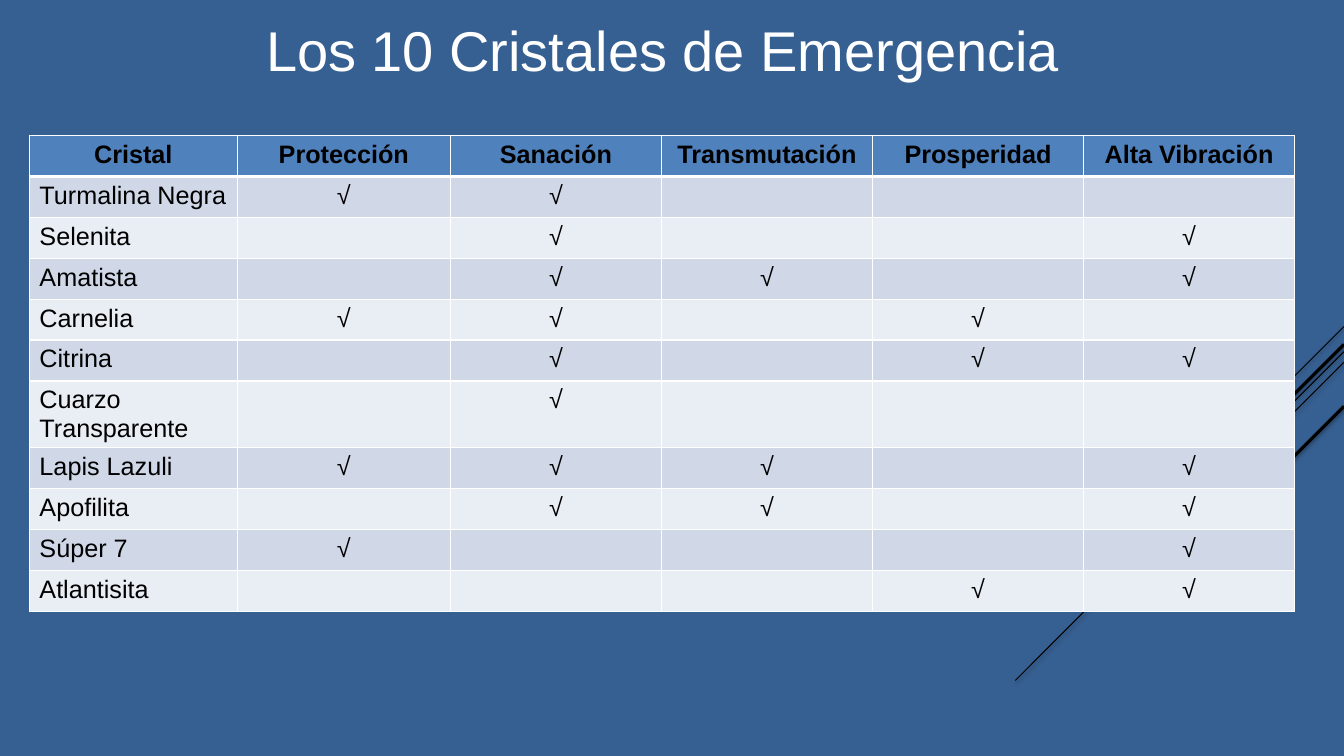
from lxml import etree
from pptx import Presentation
from pptx import util as u
from pptx.dml.color import RGBColor
from pptx.enum import shapes, text
from pptx.oxml.ns import qn

SLIDE_W, SLIDE_H = 1280, 720
FONT = "Arial"
WHITE, BLACK = "FFFFFF", "000000"
BACKGROUND, HEADER = "376092", "4F81BD"
BANDS = ["D0D8E8", "E9EDF4"]

USES = ["Protección", "Sanación", "Transmutación", "Prosperidad", "Alta Vibración"]
# Each crystal with the numbers of the uses it is ticked for
CRYSTALS = [
    ("Turmalina Negra", {0, 1}),
    ("Selenita", {1, 4}),
    ("Amatista", {1, 2, 4}),
    ("Carnelia", {0, 1, 3}),
    ("Citrina", {1, 3, 4}),
    ("Cuarzo Transparente", {1}),
    ("Lapis Lazuli", {0, 1, 2, 4}),
    ("Apofilita", {1, 2, 4}),
    ("Súper 7", {0, 4}),
    ("Atlantisita", {3, 4}),
]
COLUMN_WIDTHS = [198, 203, 201, 201, 201, 201]
ROW_HEIGHT = 39

# Diagonals from the right edge: start height, run, line width in points
DIAGONALS = [(311, 96, 0.75), (335, 313, 0.75), (345, 199, 0.75),
             (328, 184, 2.25), (387, 133, 2.25)]


def px(length):
    return u.Emu(length * 9525)


def color(value):
    return RGBColor.from_string(value)


def write(frame, wording, size=18, ink=BLACK, bold=False, centered=False, spacing=None):
    paragraph = frame.paragraphs[0]
    paragraph.alignment = text.PP_ALIGN.CENTER if centered else text.PP_ALIGN.LEFT
    paragraph.line_spacing = spacing
    run = paragraph.add_run()
    run.text = wording
    run.font.name = FONT
    run.font.size = u.Pt(size)
    run.font.bold = bold
    run.font.color.rgb = color(ink)


def add_diagonal(slide, top, run, width):
    diagonal = slide.shapes.add_connector(
        shapes.MSO_CONNECTOR.STRAIGHT, px(SLIDE_W), px(top), px(SLIDE_W - run), px(top + run))
    diagonal.line.color.rgb = color(BLACK)
    diagonal.line.width = u.Pt(width)
    # Soft shadow straight below
    effects = etree.SubElement(diagonal._element.spPr, qn("a:effectLst"))
    shadow = etree.SubElement(effects, qn("a:outerShdw"), blurRad="39400", dist="20300",
                              dir="5400000", rotWithShape="0")
    ink = etree.SubElement(shadow, qn("a:srgbClr"), val=BLACK)
    etree.SubElement(ink, qn("a:alpha"), val="38000")


def set_title(slide, wording):
    title = slide.shapes.title
    title.left, title.top, title.width, title.height = px(55), px(14), px(1152), px(73)
    frame = title.text_frame
    frame.word_wrap = True
    frame.auto_size = text.MSO_AUTO_SIZE.NONE
    frame.vertical_anchor = text.MSO_ANCHOR.MIDDLE
    write(frame, wording, size=40, ink=WHITE, centered=True, spacing=0.9)


def style_cell(cell, fill, top=1, bottom=1):
    # Borders come before the fill in the cell properties
    properties = cell._tc.get_or_add_tcPr()
    for side, width in (("L", 1), ("R", 1), ("T", top), ("B", bottom)):
        border = etree.SubElement(properties, qn(f"a:ln{side}"), w=str(u.Pt(width)))
        solid = etree.SubElement(border, qn("a:solidFill"))
        etree.SubElement(solid, qn("a:srgbClr"), val=WHITE)
    cell.fill.solid()
    cell.fill.fore_color.rgb = color(fill)


def add_crystal_table(slide):
    rows, columns = len(CRYSTALS) + 1, len(USES) + 1
    table = slide.shapes.add_table(rows, columns, px(28), px(129), px(sum(COLUMN_WIDTHS)),
                                   px(rows * ROW_HEIGHT)).table
    for column, width in zip(table.columns, COLUMN_WIDTHS):
        column.width = px(width)
    for row in table.rows:
        row.height = px(ROW_HEIGHT)

    # Header row
    for column, heading in enumerate(["Cristal"] + USES):
        cell = table.cell(0, column)
        style_cell(cell, HEADER, bottom=3)
        write(cell.text_frame, heading, bold=True, centered=True)

    # One banded row per crystal
    for row, (crystal, ticked) in enumerate(CRYSTALS, start=1):
        for column in range(columns):
            style_cell(table.cell(row, column), BANDS[(row - 1) % 2], top=3 if row == 1 else 1)
        write(table.cell(row, 0).text_frame, crystal)
        for use in sorted(ticked):
            write(table.cell(row, use + 1).text_frame, "√", centered=True)


def main():
    deck = Presentation()
    deck.slide_width, deck.slide_height = px(SLIDE_W), px(SLIDE_H)
    slide = deck.slides.add_slide(deck.slide_layouts.get_by_name("Title Only"))
    slide.background.fill.solid()
    slide.background.fill.fore_color.rgb = color(BACKGROUND)

    for top, run, width in DIAGONALS:
        add_diagonal(slide, top, run, width)
    set_title(slide, "Los 10 Cristales de Emergencia")
    add_crystal_table(slide)
    deck.save("out.pptx")


if __name__ == "__main__":
    main()
